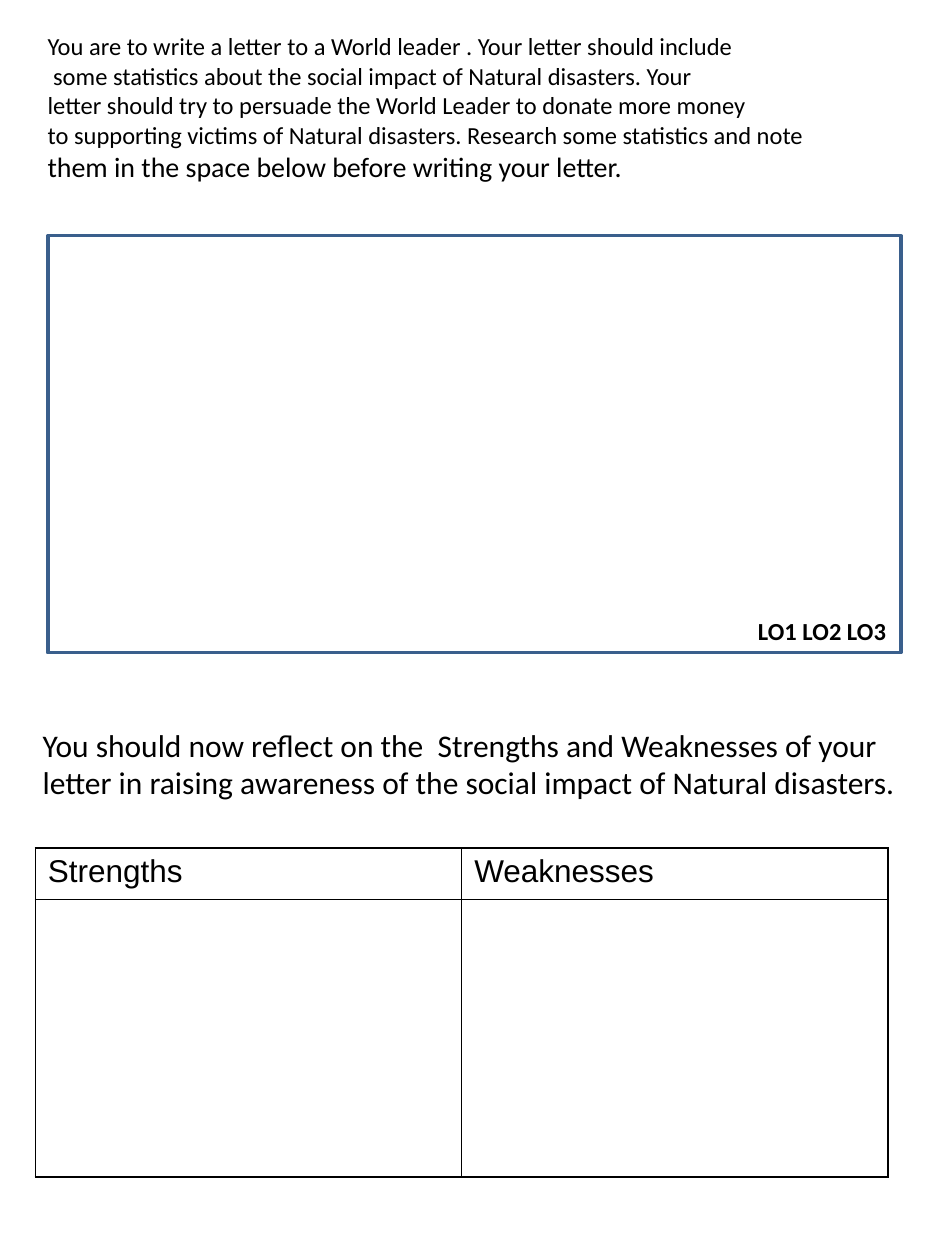
from dataclasses import dataclass

from lxml import etree
from pptx import Presentation
from pptx import util as u
from pptx.dml.color import RGBColor
from pptx.enum import shapes, text
from pptx.oxml import ns


@dataclass(frozen=True)
class Theme:
    ink: str = "000000"
    paper: str = "FFFFFF"
    edge: str = "3A5F8C"
    body: str = "Calibri"
    grid: str = "Arial"
    small: int = 14
    mid: int = 16
    large: int = 18


@dataclass(frozen=True)
class Box:
    left: float
    top: float
    width: float
    height: float

    def emu(self) -> tuple:
        return tuple(u.Inches(n) for n in (self.left, self.top, self.width, self.height))


@dataclass(frozen=True)
class Note:
    box: Box
    lines: tuple
    sizes: tuple
    wrap: bool = False
    bold: bool = False
    align: text.PP_ALIGN = text.PP_ALIGN.LEFT


LOOK = Theme()
WIDE = 6.77
SIDE = 0.28

NOTES = (
    Note(
        Box(SIDE, 0.2, WIDE, 1.65),
        (
            "You are to write a letter to a World leader . Your letter should include",
            " some statistics about the social impact of Natural disasters. Your",
            "letter should try to persuade the World Leader to donate more money",
            "to supporting victims of Natural disasters. Research some statistics and note",
            "them in the space below before writing your letter.",
        ),
        (LOOK.small,) * 4 + (LOOK.mid,),
        wrap=True,
    ),
    Note(
        Box(0.24, 5.71, 7.06, 0.71),
        (
            "You should now reflect on the  Strengths and Weaknesses of your",
            "letter in raising awareness of the social impact of Natural disasters.",
        ),
        (LOOK.large,) * 2,
    ),
    Note(
        Box(5.91, 4.84, 1.23, 0.34),
        ("LO1 LO2 LO3",),
        (LOOK.small,),
        bold=True,
        align=text.PP_ALIGN.CENTER,
    ),
)
FRAME = Box(0.38, 1.87, WIDE, 3.31)
TABLE = Box(SIDE, 6.73, WIDE, 2.61)
HEADS = ("Strengths", "Weaknesses")
HEAD_ROW = 0.41


def write(para, words: str, *, size: int, font: str = LOOK.body,
          bold: bool = False, align=text.PP_ALIGN.LEFT) -> None:
    para.alignment = align
    run = para.add_run()
    run.text = words
    run.font.name = font
    run.font.size = u.Pt(size)
    run.font.bold = bold
    run.font.color.rgb = RGBColor.from_string(LOOK.ink)


def draw_note(slide, note: Note) -> None:
    frame = slide.shapes.add_textbox(*note.box.emu()).text_frame
    frame.word_wrap = note.wrap
    for i, (line, size) in enumerate(zip(note.lines, note.sizes)):
        para = frame.add_paragraph() if i else frame.paragraphs[0]
        write(para, line, size=size, bold=note.bold, align=note.align)


def draw_frame(slide, box: Box) -> None:
    rect = slide.shapes.add_shape(shapes.MSO_SHAPE.RECTANGLE, *box.emu())
    rect.shadow.inherit = False
    rect.fill.solid()
    rect.fill.fore_color.rgb = RGBColor.from_string(LOOK.paper)
    rect.line.color.rgb = RGBColor.from_string(LOOK.edge)
    rect.line.width = u.Pt(2)


def rule_cell(cell) -> None:
    cell.fill.background()
    props = cell._tc.get_or_add_tcPr()
    for i, side in enumerate(("lnL", "lnR", "lnT", "lnB")):
        line = etree.Element(ns.qn(f"a:{side}"), w=str(u.Pt(1)))
        fill = etree.SubElement(line, ns.qn("a:solidFill"))
        etree.SubElement(fill, ns.qn("a:srgbClr"), val=LOOK.ink)
        props.insert(i, line)


def draw_table(slide, box: Box, heads: tuple) -> None:
    table = slide.shapes.add_table(2, len(heads), *box.emu()).table
    table.first_row = table.horz_banding = False
    for row, tall in zip(table.rows, (HEAD_ROW, box.height - HEAD_ROW)):
        row.height = u.Inches(tall)
    for cell in table.iter_cells():
        rule_cell(cell)
    for i, head in enumerate(heads):
        write(table.cell(0, i).text_frame.paragraphs[0], head,
              size=LOOK.large, font=LOOK.grid)


def main() -> None:
    deck = Presentation()
    deck.slide_width, deck.slide_height = u.Inches(7.5), u.Inches(10)
    slide = deck.slides.add_slide(deck.slide_layouts[6])
    task, review, goals = NOTES
    draw_note(slide, task)
    draw_frame(slide, FRAME)
    draw_note(slide, review)
    draw_table(slide, TABLE, HEADS)
    draw_note(slide, goals)
    deck.save("out.pptx")


if __name__ == "__main__":
    main()
